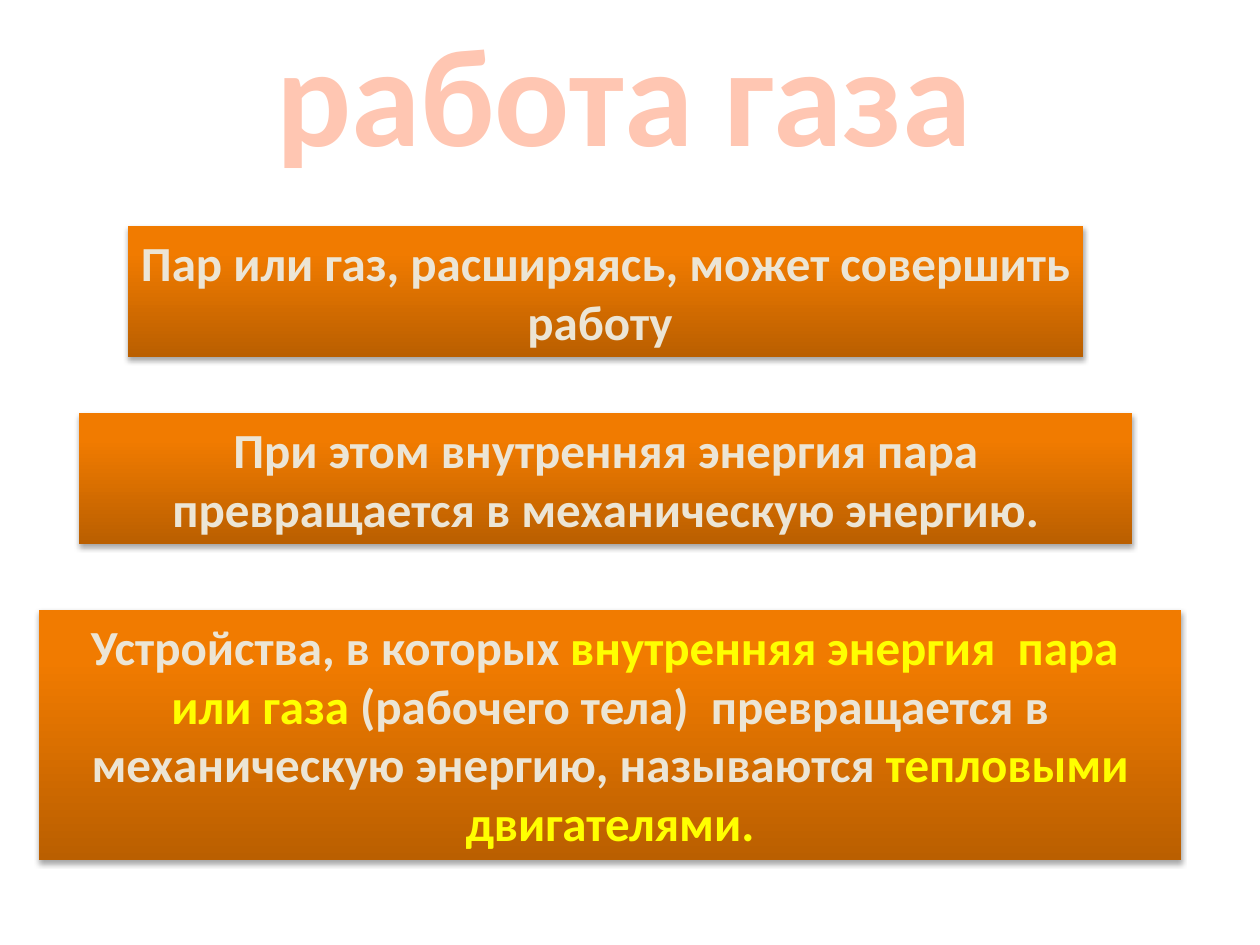
from copy import deepcopy

from lxml import etree
from pptx import Presentation
from pptx.dml.color import RGBColor
from pptx.enum.shapes import MSO_SHAPE
from pptx.enum.text import MSO_ANCHOR, MSO_AUTO_SIZE, PP_ALIGN
from pptx.oxml.ns import qn
from pptx.util import Emu, Pt

RECTANGLE = MSO_SHAPE.RECTANGLE
TOP = MSO_ANCHOR.TOP
GROW = MSO_AUTO_SIZE.SHAPE_TO_FIT_TEXT
CENTER = PP_ALIGN.CENTER

PINK = RGBColor(0xFF, 0xC6, 0xB2)
CREAM = RGBColor(0xEC, 0xE5, 0xD5)
YELLOW = RGBColor(0xFF, 0xFF, 0x00)
DARK_ORANGE = RGBColor(0xBA, 0x5F, 0x00)
ORANGE = RGBColor(0xF1, 0x7B, 0x00)
LIGHT_ORANGE = RGBColor(0xF2, 0x7C, 0x00)
BLACK = RGBColor(0x00, 0x00, 0x00)

PX_PER_INCH = 126


def px(length):
    return Emu(round(length * 914400 / PX_PER_INCH))


def write_text(frame, runs, size, font="Calibri", bold=True):
    """Fill a frame with one centred paragraph of (text, colour) runs."""
    frame.word_wrap = True
    frame.auto_size = GROW
    frame.vertical_anchor = TOP
    paragraph = frame.paragraphs[0]
    paragraph.alignment = CENTER
    for text, color in runs:
        run = paragraph.add_run()
        run.text = text
        run.font.name = font
        run.font.size = Pt(size)
        run.font.bold = bold
        run.font.color.rgb = color


class SlideBuilder:
    title_size = 80
    body_size = 28
    gradient = [(0, DARK_ORANGE), (0.8, ORANGE), (1, LIGHT_ORANGE)]

    def __init__(self, slide):
        self.slide = slide

    def title(self, text, left, top, width, height):
        box = self.slide.shapes.add_textbox(px(left), px(top), px(width), px(height))
        write_text(box.text_frame, [(text, PINK)], self.title_size)

    def panel(self, runs, left, top, width, height):
        shape = self.slide.shapes.add_shape(
            RECTANGLE, px(left), px(top), px(width), px(height))
        shape.line.fill.background()
        self.fill_gradient(shape)
        self.add_shadow(shape)
        write_text(shape.text_frame, runs, self.body_size)

    def fill_gradient(self, shape):
        fill = shape.fill
        fill.gradient()
        fill.gradient_angle = 90
        stop_list = shape._element.spPr.find(".//" + qn("a:gsLst"))
        stop_list.append(deepcopy(stop_list[-1]))
        for stop, (position, color) in zip(fill.gradient_stops, self.gradient):
            stop.position = position
            stop.color.rgb = color

    def add_shadow(self, shape):
        shape.shadow.inherit = False
        effects = shape._element.spPr.find(qn("a:effectLst"))
        shadow = etree.SubElement(
            effects, qn("a:outerShdw"), blurRad=str(Pt(3.1)), dist=str(Pt(1.8)),
            dir="5400000", rotWithShape="0")
        color = etree.SubElement(shadow, qn("a:srgbClr"), val=str(BLACK))
        etree.SubElement(color, qn("a:alpha"), val="35000")


def main():
    presentation = Presentation()
    presentation.slide_width = px(1260)
    presentation.slide_height = px(945)
    slide = presentation.slides.add_slide(presentation.slide_layouts[6])
    builder = SlideBuilder(slide)

    # Heading
    builder.title("работа газа", 59, 0, 1131, 183)

    # Statements, widening down the slide
    builder.panel([("Пар или газ, расширяясь, может совершить работу ", CREAM)],
                  128, 226, 955, 131)
    builder.panel([("При этом внутренняя энергия пара превращается "
                    "в механическую энергию.", CREAM)],
                  79, 413, 1053, 131)
    builder.panel([
        ("Устройства, в которых ", CREAM),
        ("внутренняя энергия  пара  или газа ", YELLOW),
        ("(рабочего тела)  превращается в механическую энергию, называются ", CREAM),
        ("тепловыми двигателями.", YELLOW),
    ], 39, 610, 1142, 250)

    presentation.save("out.pptx")


if __name__ == "__main__":
    main()
